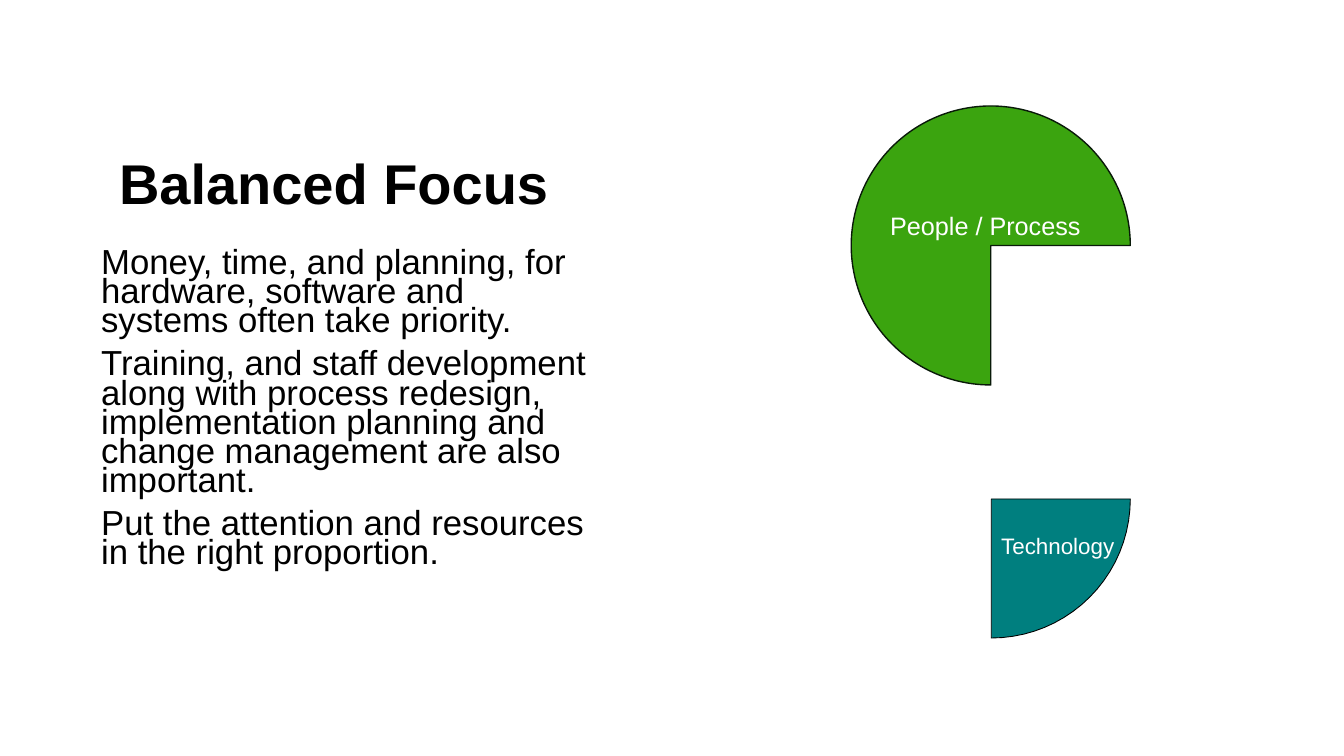
import math

from pptx import Presentation
from pptx.dml.color import RGBColor
from pptx.enum.shapes import MSO_SHAPE
from pptx.enum.text import MSO_ANCHOR, MSO_AUTO_SIZE, PP_ALIGN
from pptx.util import Emu, Inches, Pt
from lxml import etree

PIE = MSO_SHAPE.PIE
BOTTOM, TOP = MSO_ANCHOR.BOTTOM, MSO_ANCHOR.TOP
NO_AUTOFIT = MSO_AUTO_SIZE.NONE
CENTER, LEFT = PP_ALIGN.CENTER, PP_ALIGN.LEFT

# Content
HEADING = "Balanced Focus"
POINTS = [
    "Money, time, and planning, for hardware, software and systems often take priority.",
    "Training, and staff development along with process redesign, "
    "implementation planning and change management are also important.",
    "Put the attention and resources in the right proportion.",
]
LABELS = [  # text, box in px, size in pt
    ("People / Process", (880, 205, 225, 40), 18),
    ("Technology", (991, 527, 166, 37), 16),
]
COLORS = {
    "text": "000000",
    "label": "FFFFFF",
    "people": "3BA40F",
    "people_edge": "091A09",
    "technology": "007F7F",
    "technology_edge": "000000",
}
FONT = "Arial"

# Geometry in px
PX = 914400 / 100.8
HEADING_BOX = (91, 61, 485, 161)
POINTS_BOX = (91, 246, 514, 392)
PEOPLE_BOX = (851, 106, 279, 279)
WEDGE_CORNER, WEDGE_RADIUS, WEDGE_STEPS = (991, 499), 139, 20


def emu(*lengths):
    return [Emu(round(length * PX)) for length in lengths]


def color(key):
    return RGBColor.from_string(COLORS[key])


def place(part, box):
    part.left, part.top, part.width, part.height = emu(*box)


def write(paragraph, text, size, ink, bold=False):
    run = paragraph.add_run()
    run.text = text
    run.font.name = FONT
    run.font.size = Pt(size)
    run.font.bold = bold
    run.font.color.rgb = color(ink)


def paint(sector, key, edge_width):
    sector.shadow.inherit = False
    sector.fill.solid()
    sector.fill.fore_color.rgb = color(key)
    sector.line.color.rgb = color(key + "_edge")
    sector.line.width = Pt(edge_width)


prs = Presentation()
prs.slide_width, prs.slide_height = Inches(13.33), Inches(7.5)
slide = prs.slides.add_slide(prs.slide_layouts[1])
heading, points = slide.placeholders

# Heading and points
for part, box, anchor in ((heading, HEADING_BOX, BOTTOM), (points, POINTS_BOX, TOP)):
    place(part, box)
    part.text_frame.word_wrap = True
    part.text_frame.auto_size = NO_AUTOFIT
    part.text_frame.vertical_anchor = anchor

heading_line = heading.text_frame.paragraphs[0]
heading_line.alignment = CENTER
heading_line.line_spacing = 0.9
write(heading_line, HEADING, 40, "text", bold=True)

for i, point in enumerate(POINTS):
    frame = points.text_frame
    paragraph = frame.add_paragraph() if i else frame.paragraphs[0]
    paragraph.alignment = LEFT
    paragraph.line_spacing = 0.7
    paragraph.space_before = Pt(10 if i else 0)
    props = paragraph._p.get_or_add_pPr()
    props.set("marL", "0")
    props.set("indent", "0")
    etree.SubElement(props, props.tag.replace("pPr", "buNone"))
    write(paragraph, point, 24.8, "text")

# Three quarters for people and process
people = slide.shapes.add_shape(PIE, *emu(*PEOPLE_BOX))
people.rotation = 90
paint(people, "people", 1)

# One quarter for technology
x, y = WEDGE_CORNER
angles = [math.pi / 2 * (1 - i / WEDGE_STEPS) for i in range(WEDGE_STEPS + 1)]
arc = [
    emu(x + WEDGE_RADIUS * math.cos(a), y + WEDGE_RADIUS * math.sin(a)) for a in angles
]
outline = slide.shapes.build_freeform(*emu(x, y))
outline.add_line_segments(arc, close=True)
paint(outline.convert_to_shape(), "technology", 0.63)

# Sector labels
for text, box, size in LABELS:
    label = slide.shapes.add_textbox(*emu(*box)).text_frame
    label.word_wrap = True
    write(label.paragraphs[0], text, size, "label")

prs.save("out.pptx")
